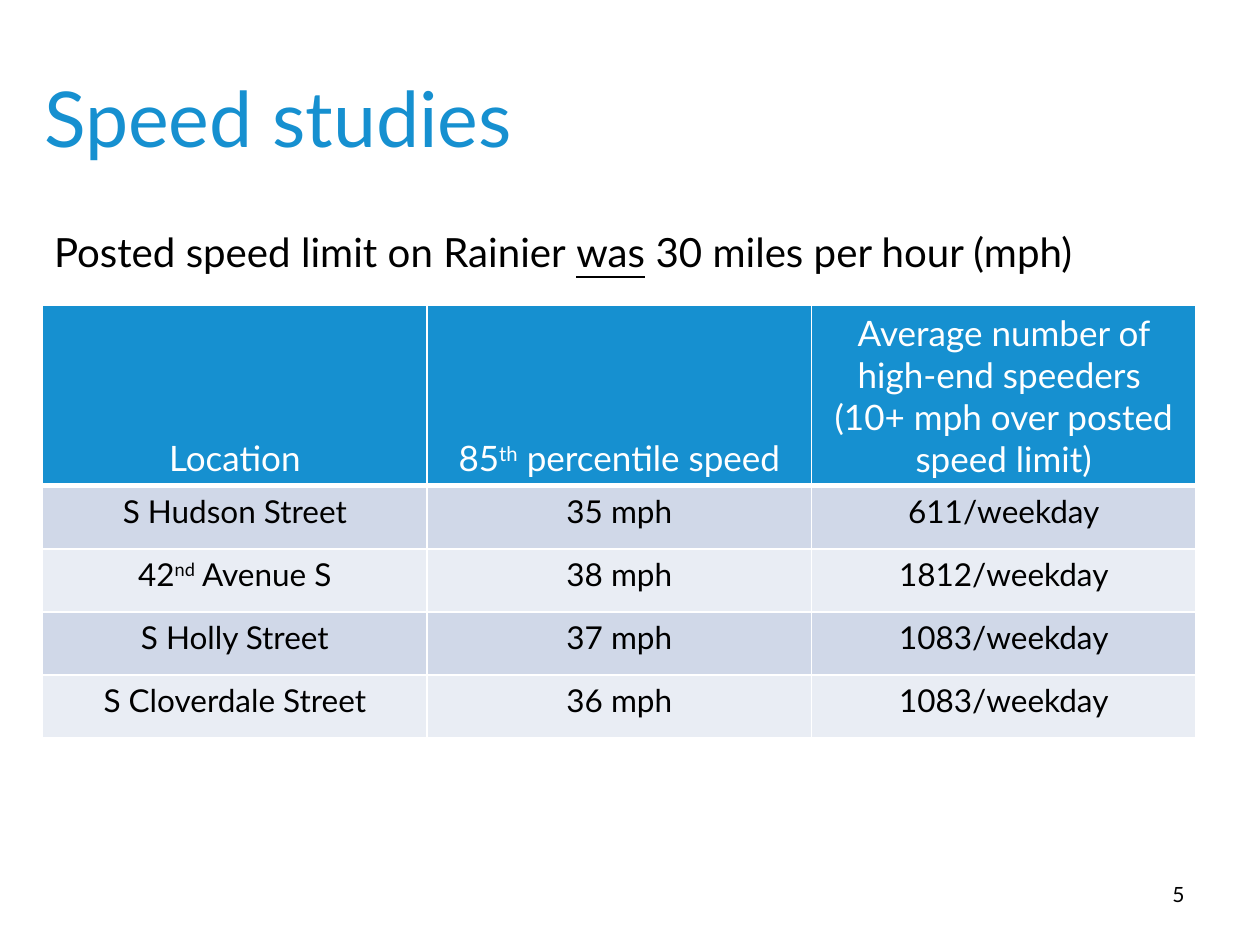
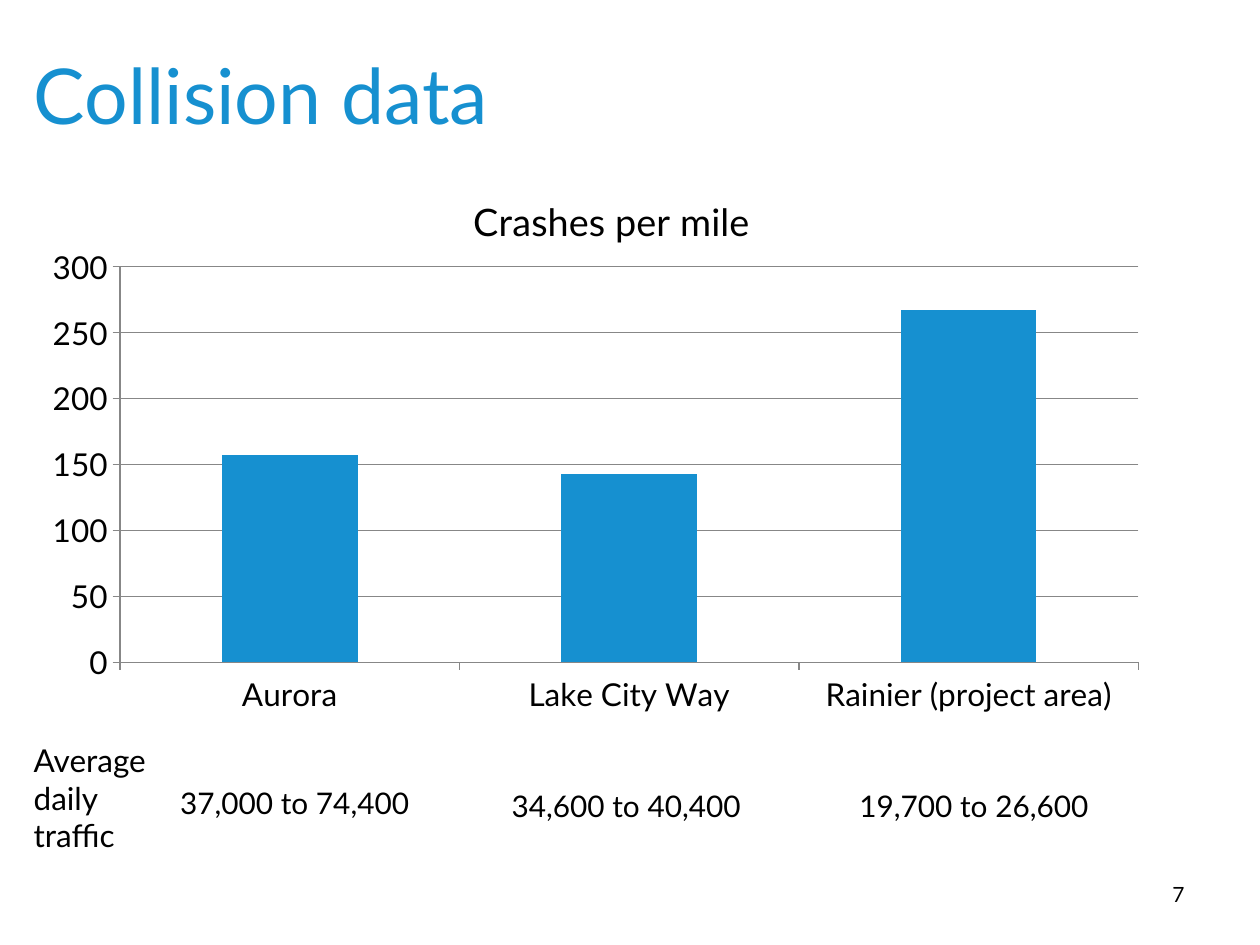
from lxml import etree
from pptx import Presentation
from pptx.chart.data import CategoryChartData
from pptx.dml.color import RGBColor
from pptx.enum.chart import XL_CHART_TYPE, XL_TICK_MARK
from pptx.enum.text import MSO_ANCHOR, MSO_AUTO_SIZE, PP_ALIGN
from pptx.oxml import parse_xml
from pptx.oxml.ns import nsdecls, qn
from pptx.util import Cm, Pt

BLUE = RGBColor(0x16, 0x90, 0xD0)
BLACK = RGBColor(0, 0, 0)
WHITE = RGBColor(0xFF, 0xFF, 0xFF)
GREY = RGBColor(0x87, 0x87, 0x87)
BAND_DARK = RGBColor(0xD0, 0xD8, 0xE8)
BAND_LIGHT = RGBColor(0xE9, 0xED, 0xF4)

FONT = "Lato"
LEFT, CENTER, RIGHT = PP_ALIGN.LEFT, PP_ALIGN.CENTER, PP_ALIGN.RIGHT
TOP, MIDDLE, BOTTOM = MSO_ANCHOR.TOP, MSO_ANCHOR.MIDDLE, MSO_ANCHOR.BOTTOM
COLUMN = XL_CHART_TYPE.COLUMN_CLUSTERED
TICK_OUT = XL_TICK_MARK.OUTSIDE
TITLE_ONLY = 5

# A cell is a list of paragraphs, a paragraph a list of (text, style) spans.
SPEED_HEADER = [
    [[("Location", "")]],
    [[("85", ""), ("th", "super"), (" percentile speed", "")]],
    [[("Average number of high-end speeders ", "")],
     [("(10+ mph over posted speed limit)", "")]],
]
SPEED_ROWS = [
    ([("S Hudson Street", "")], "35 mph", "611/weekday"),
    ([("42", ""), ("nd", "super"), (" Avenue S", "")], "38 mph", "1812/weekday"),
    ([("S Holly Street", "")], "37 mph", "1083/weekday"),
    ([("S Cloverdale Street", "")], "36 mph", "1083/weekday"),
]
CRASHES = {"Aurora": 157, "Lake City Way": 143, "Rainier (project area)": 267}


def style_font(font, size, color=BLACK):
    font.name = FONT
    font.size = Pt(size)
    font.bold = False
    font.color.rgb = color


def write(frame, paragraphs, size, color=BLACK, align=LEFT):
    for index, spans in enumerate(paragraphs):
        para = frame.add_paragraph() if index else frame.paragraphs[0]
        para.alignment = align
        style_font(para.font, size, color)
        for text, style in spans:
            span = para.add_run()
            span.text = text
            if style == "underline":
                span.font.underline = True
            elif style == "super":
                span._r.get_or_add_rPr().set("baseline", "30000")


def add_text(page, left, top, width, height, spans, size, align=LEFT):
    box = page.shapes.add_textbox(Cm(left), Cm(top), Cm(width), Cm(height))
    box.text_frame.word_wrap = True
    write(box.text_frame, [spans], size, align=align)


def add_page(deck, title, left, top, number):
    """Add a page with its title and page number."""
    page = deck.slides.add_slide(deck.slide_layouts[TITLE_ONLY])
    heading = page.shapes.title
    heading.left, heading.top = Cm(left), Cm(top)
    heading.width, heading.height = Cm(22.86), Cm(3.18)
    frame = heading.text_frame
    frame.auto_size = MSO_AUTO_SIZE.NONE
    frame.vertical_anchor = MIDDLE
    write(frame, [[(title, "")]], 44, BLUE)
    add_text(page, 18.21, 17.65, 5.92, 1.02, [(number, "")], 12, RIGHT)
    return page


def set_borders(cell, top, bottom):
    """Draw white cell borders; top and bottom are widths in points."""
    properties = cell._tc.get_or_add_tcPr()
    for side, width in (("L", 1), ("R", 1), ("T", top), ("B", bottom)):
        properties.append(parse_xml(
            f'<a:ln{side} {nsdecls("a")} w="{Pt(width)}"><a:solidFill>'
            f'<a:srgbClr val="{WHITE}"/></a:solidFill></a:ln{side}>'))


def fill_cell(cell, paragraphs, size, color, fill, anchor, top, bottom):
    set_borders(cell, top, bottom)
    cell.fill.solid()
    cell.fill.fore_color.rgb = fill
    cell.vertical_anchor = anchor
    write(cell.text_frame, paragraphs, size, color, CENTER)


def add_speed_table(page):
    frame = page.shapes.add_table(
        len(SPEED_ROWS) + 1, len(SPEED_HEADER),
        Cm(0.86), Cm(6.15), Cm(23.25), Cm(8.71))
    table = frame.table
    table.first_row = table.horz_banding = False
    for column in table.columns:
        column.width = Cm(7.75)
    for index, row in enumerate(table.rows):
        row.height = Cm(1.27 if index else 3.63)
    for column, paragraphs in enumerate(SPEED_HEADER):
        fill_cell(table.cell(0, column), paragraphs, 20, WHITE, BLUE, BOTTOM, 1, 3)
    for index, (street, speed, speeders) in enumerate(SPEED_ROWS, start=1):
        fill = BAND_DARK if index % 2 else BAND_LIGHT
        for column, spans in enumerate((street, [(speed, "")], [(speeders, "")])):
            fill_cell(table.cell(index, column), [spans], 18, BLACK, fill, TOP,
                      3 if index == 1 else 1, 1)


def style_line(line):
    line.color.rgb = GREY
    line.width = Pt(0.75)


def place_plot(chart, **fractions):
    """Fix the inner plot area as fractions of the chart."""
    plot_area = chart._chartSpace.chart.plotArea
    for layout in plot_area.findall(qn("c:layout")):
        plot_area.remove(layout)
    layout = etree.Element(qn("c:layout"))
    manual = etree.SubElement(layout, qn("c:manualLayout"))
    settings = {"layoutTarget": "inner", "xMode": "edge", "yMode": "edge", **fractions}
    for name, value in settings.items():
        etree.SubElement(manual, qn(f"c:{name}")).set("val", str(value))
    plot_area.insert(0, layout)


def add_crash_chart(page):
    data = CategoryChartData()
    data.categories = list(CRASHES)
    data.add_series("Crashes per mile", list(CRASHES.values()))
    chart = page.shapes.add_chart(
        COLUMN, Cm(0.53), Cm(3.38), Cm(23.6), Cm(12.47), data).chart
    style_font(chart.font, 18)
    chart.has_legend = False
    chart.has_title = True
    write(chart.chart_title.text_frame, [[("Crashes per mile", "")]], 21.6, align=CENTER)
    chart.chart_title.include_in_layout = False

    # Bars
    plot = chart.plots[0]
    plot.gap_width = 150
    plot.vary_by_categories = False
    bars = plot.series[0].format.fill
    bars.solid()
    bars.fore_color.rgb = BLUE

    # Axes
    for axis in (chart.category_axis, chart.value_axis):
        axis.major_tick_mark = TICK_OUT
        style_line(axis.format.line)
        style_font(axis.tick_labels.font, 18)
    scale = chart.value_axis
    scale.minimum_scale, scale.maximum_scale, scale.major_unit = 0, 300, 50
    scale.has_major_gridlines = True
    style_line(scale.major_gridlines.format.line)
    place_plot(chart, x=0.08, y=0.16, w=0.87, h=0.64)


def build_speed_page(deck):
    page = add_page(deck, "Speed studies", 0.64, 0.76, "5")
    add_text(page, 0.84, 4.45, 24.56, 1.27, [
        ("Posted speed limit on Rainier ", ""),
        ("was", "underline"),
        (" 30 miles per hour (mph)", "")], 23)
    add_speed_table(page)


def build_collision_page(deck):
    page = add_page(deck, "Collision data", 0.43, 0.3, "7")
    add_crash_chart(page)
    # Traffic figures under the bars
    for left, top, width, align, traffic in (
            (3.38, 15.7, 5.21, LEFT, "37,000 to 74,400"),
            (9.3, 15.75, 6.65, CENTER, "34,600 to 40,400"),
            (16.31, 15.75, 6.65, CENTER, "19,700 to 26,600")):
        add_text(page, left, top, width, 0.99, [(traffic, "")], 17, align)
    add_text(page, 0.43, 14.81, 2.97, 2.57, [("Average daily traffic", "")], 18)


def main():
    deck = Presentation()
    deck.slide_width, deck.slide_height = Cm(25.4), Cm(19.05)
    build_speed_page(deck)
    build_collision_page(deck)
    deck.save("out.pptx")


if __name__ == "__main__":
    main()
